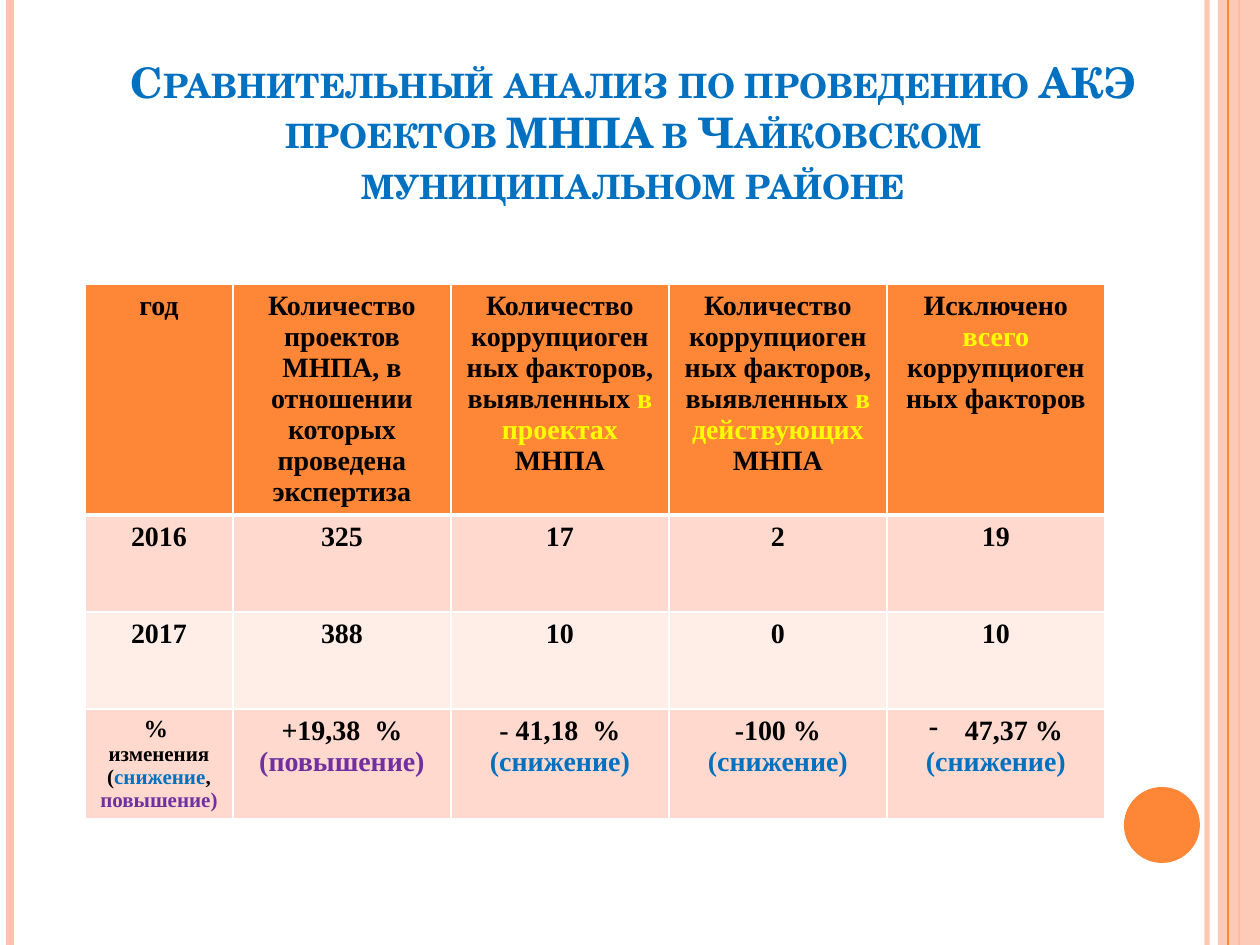
from lxml.etree import SubElement
from pptx import Presentation
from pptx.dml.color import RGBColor
from pptx.enum.shapes import MSO_CONNECTOR, MSO_SHAPE
from pptx.enum.text import MSO_ANCHOR, PP_ALIGN
from pptx.oxml.ns import qn
from pptx.util import Pt

PX = 914400 // 126
WIDE, HIGH = 1260, 945
HUES = {"white": "FFFFFF", "black": "000000", "orange": "FE8637",
        "peach": "FEC3AE", "band": "FFD9CE", "pale": "FFEDE8",
        "blue": "0070C0", "violet": "7030A0", "yellow": "FFFF00"}
SERIF, BOOK = "Times New Roman", "TeX Gyre Schola"

TITLE = ("Сравнительный анализ по проведению АКЭ проектов МНПА "
         "в Чайковском муниципальном районе")

# Vertical lines: x, colour, width in points, opacity in percent
LINES = [(1207, "peach", 3, 93), (10, "peach", 4.5, 100),
         (1239, "orange", 1.5, 100), (1228, "orange", 0.75, 100)]

# A cell is a list of paragraphs; a paragraph is a list of runs:
# text, then colour (black) and size (16) where they differ
DOWN = [("(снижение)", "blue")]
HEAD = [
    [[("год",)]],
    [[("Количество проектов МНПА, в отношении которых проведена экспертиза",)]],
    [[("Количество коррупциогенных факторов, выявленных ",),
      ("в проектах", "yellow"), (" МНПА",)]],
    [[("Количество коррупциогенных факторов, выявленных",),
      (" в действующих ", "yellow"), ("МНПА",)]],
    [[("Исключено ",), ("всего ", "yellow"), ("коррупциогенных факторов",)]],
]
YEARS = [["2016", "325", "17", "2", "19"], ["2017", "388", "10", "0", "10"]]
CHANGE = [
    [[("%  ", "black", 14), ("изменения", "black", 12)],
     [("(", "black", 12), ("снижение", "blue", 12), (", ", "black", 12),
      ("повышение)", "violet", 12)]],
    [[("+19,38  % ",), ("(повышение)", "violet")]],
    [[("- 41,18  %",)], DOWN],
    [[("-100 %",)], DOWN],
    [[("47,37 %",)], DOWN],
]
ROWS = [HEAD] + [[[[(word,)]] for word in year] for year in YEARS] + [CHANGE]
FILLS = ["orange", "band", "pale", "band"]
COLS = [148] + [218] * 4
TALL = [231, 97, 97, 109]


def rgb(name):
    return RGBColor.from_string(HUES[name])


def box(*sides):
    return [side * PX for side in sides]


def fade(part, rate):
    for hue in part.iter(qn("a:srgbClr")):
        SubElement(hue, qn("a:alpha"), val=str(rate * 1000))


def add_rule(slide, x, hue, width, rate):
    rule = slide.shapes.add_connector(MSO_CONNECTOR.STRAIGHT,
                                      *box(x, 0, x, HIGH))
    rule.line.color.rgb = rgb(hue)
    rule.line.width = Pt(width)
    props = rule._element.spPr
    if rate < 100:
        fade(props, rate)
    SubElement(props, qn("a:effectLst"))


def add_plain(slide, kind, place, hue):
    shape = slide.shapes.add_shape(kind, *box(*place))
    shape.shadow.inherit = False
    shape.fill.solid()
    shape.fill.fore_color.rgb = rgb(hue)
    shape.line.fill.background()
    return shape


def add_edges(cell, base):
    props = cell._tc.get_or_add_tcPr()
    sides = {"lnL": 1, "lnR": 1, "lnT": 1, "lnB": base}
    for spot, (tag, width) in enumerate(sides.items()):
        edge = SubElement(props, qn("a:" + tag), w=str(Pt(width)))
        fill = SubElement(edge, qn("a:solidFill"))
        SubElement(fill, qn("a:srgbClr"), val=HUES["white"])
        props.insert(spot, edge)


def fill_cell(cell, paras, hue):
    cell.fill.solid()
    cell.fill.fore_color.rgb = rgb(hue)
    frame = cell.text_frame
    for spot, runs in enumerate(paras):
        para = frame.add_paragraph() if spot else frame.paragraphs[0]
        para.alignment = PP_ALIGN.CENTER
        para.font.name, para.font.bold = SERIF, True
        for text, tint, size in ((*run, "black", 16)[:3] if len(run) == 1
                                 else (*run, 16)[:3] for run in runs):
            run = para.add_run()
            run.text = text
            run.font.size = Pt(size)
            run.font.color.rgb = rgb(tint)


def add_dash(para):
    props = para._p.get_or_add_pPr()
    props.set("marL", str(36 * PX))
    props.set("indent", str(-36 * PX))
    mark = SubElement(props, qn("a:buChar"), char="-")
    props.insert(0, mark)


def main():
    deck = Presentation()
    deck.slide_width, deck.slide_height = box(WIDE, HIGH)
    slide = deck.slides.add_slide(deck.slide_layouts[5])

    # Side stripes and disc
    for line in LINES[:3]:
        add_rule(slide, *line)
    band = add_plain(slide, MSO_SHAPE.RECTANGLE, (1218, 0, 42, HIGH), "peach")
    fade(band._element.spPr, 87)
    add_rule(slide, *LINES[3])
    add_plain(slide, MSO_SHAPE.OVAL, (1124, 787, 76, 76), "orange")

    # Title
    title = slide.shapes.title
    title.left, title.top, title.width, title.height = box(84, 45, 1099, 169)
    frame = title.text_frame
    frame.text = TITLE
    frame.word_wrap = True
    frame.vertical_anchor = MSO_ANCHOR.BOTTOM
    para = frame.paragraphs[0]
    para.alignment = PP_ALIGN.CENTER
    font = para.runs[0].font
    font.name, font.size, font.bold = BOOK, Pt(24), True
    font.color.rgb = rgb("blue")
    font._element.set("cap", "small")

    # Table
    place = box(85, 284, sum(COLS), sum(TALL))
    table = slide.shapes.add_table(len(ROWS), len(COLS), *place).table
    for col, width in zip(table.columns, COLS):
        col.width = width * PX
    for spot, (row, height) in enumerate(zip(table.rows, TALL)):
        row.height = height * PX
        for cell, paras in zip(row.cells, ROWS[spot]):
            fill_cell(cell, paras, FILLS[spot])
            add_edges(cell, 1 if spot else 3)
    add_dash(table.cell(3, 4).text_frame.paragraphs[0])

    deck.save("out.pptx")


if __name__ == "__main__":
    main()
